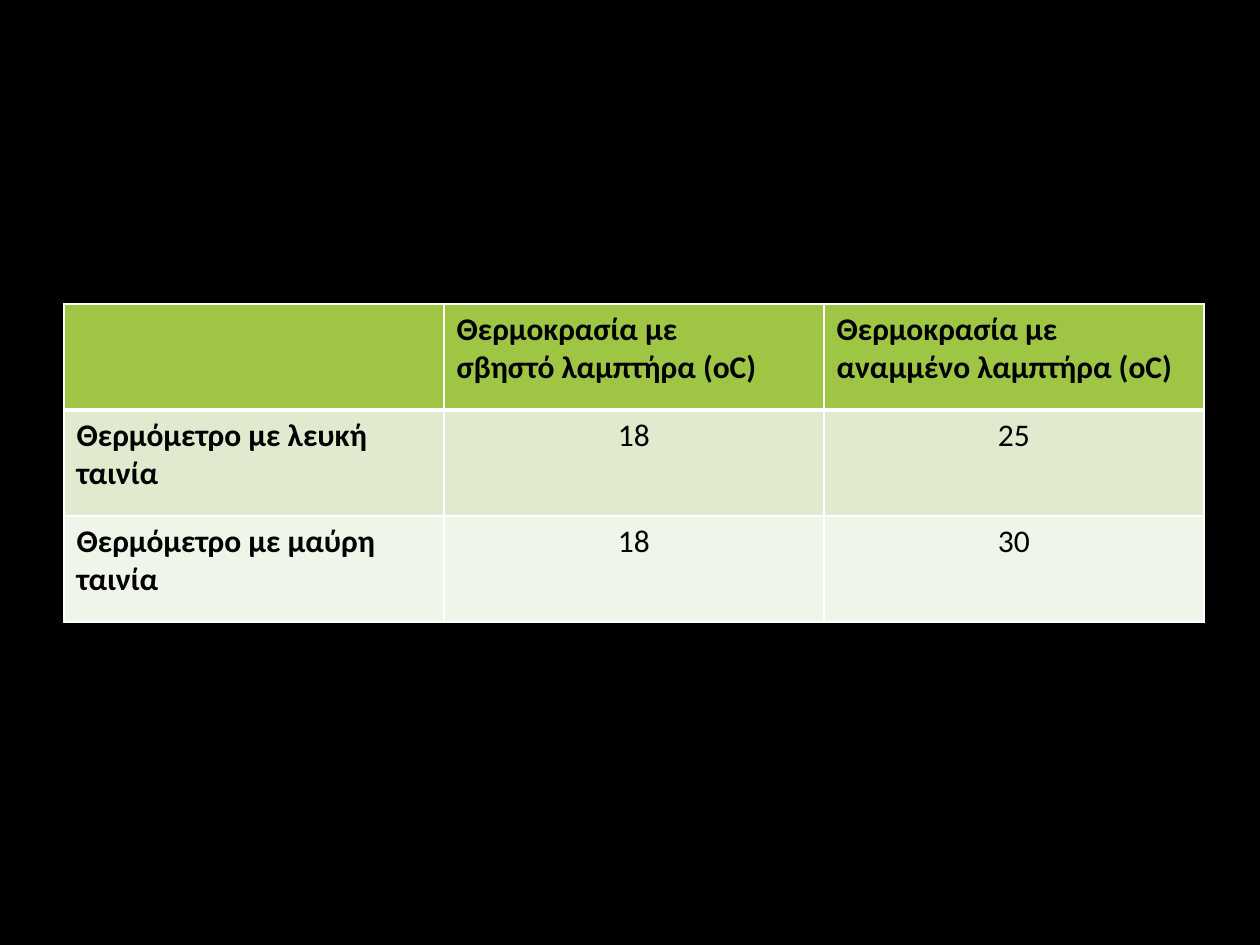
from lxml import etree
from pptx import Presentation
from pptx.dml.color import RGBColor
from pptx.enum.text import PP_ALIGN
from pptx.oxml.ns import qn
from pptx.util import Emu, Pt

LEFT, CENTER = PP_ALIGN.LEFT, PP_ALIGN.CENTER

ROWS = [
    ["", "Θερμοκρασία με\nσβηστό λαμπτήρα (oC)", "Θερμοκρασία με αναμμένο λαμπτήρα (oC)"],
    ["Θερμόμετρο με λευκή ταινία", "18", "25"],
    ["Θερμόμετρο με μαύρη ταινία", "18", "30"],
]
COLORS = {"page": "000000", "text": "000000", "border": "FFFFFF",
          "header": "9EC544", "dark band": "DFEACF", "light band": "F0F5E9"}
ROW_FILLS = ["header", "dark band", "light band"]
FONT, TEXT_SIZE = "Calibri", 18
THIN, THICK = 1, 3
PAGE_WIDTH, PAGE_HEIGHT = 1260, 945
TABLE_LEFT, TABLE_TOP = 64, 304
COLUMN_WIDTH, ROW_HEIGHT = 380, 106


def px(count):
    return Emu(count * 914400 // 126)


def paint(fill, name):
    fill.solid()
    fill.fore_color.rgb = RGBColor.from_string(COLORS[name])


def add_border(cell, side, width):
    line = etree.SubElement(cell._tc.get_or_add_tcPr(), qn(f"a:ln{side}"), w=str(Pt(width)))
    solid = etree.SubElement(line, qn("a:solidFill"))
    etree.SubElement(solid, qn("a:srgbClr"), val=COLORS["border"])


def style_cell(cell, text, row, column):
    widths = {"L": THIN, "R": THIN,
              "T": THICK if row == 1 else THIN,
              "B": THICK if row == 0 else THIN}
    for side, width in widths.items():
        add_border(cell, side, width)
    paint(cell.fill, ROW_FILLS[row])
    cell.text = text
    is_heading = row == 0 or column == 0
    for para in cell.text_frame.paragraphs:
        para.alignment = LEFT if is_heading else CENTER
        para.font.name = FONT
        para.font.size = Pt(TEXT_SIZE)
        para.font.bold = is_heading
        para.font.color.rgb = RGBColor.from_string(COLORS["text"])


def main():
    deck = Presentation()
    deck.slide_width, deck.slide_height = px(PAGE_WIDTH), px(PAGE_HEIGHT)
    page = deck.slides.add_slide(deck.slide_layouts[6])
    paint(page.background.fill, "page")

    row_count, column_count = len(ROWS), len(ROWS[0])
    table = page.shapes.add_table(
        row_count, column_count, px(TABLE_LEFT), px(TABLE_TOP),
        px(COLUMN_WIDTH * column_count), px(ROW_HEIGHT * row_count)).table
    for column in table.columns:
        column.width = px(COLUMN_WIDTH)
    for row in table.rows:
        row.height = px(ROW_HEIGHT)
    for row, texts in enumerate(ROWS):
        for column, text in enumerate(texts):
            style_cell(table.cell(row, column), text, row, column)

    deck.save("out.pptx")


if __name__ == "__main__":
    main()
